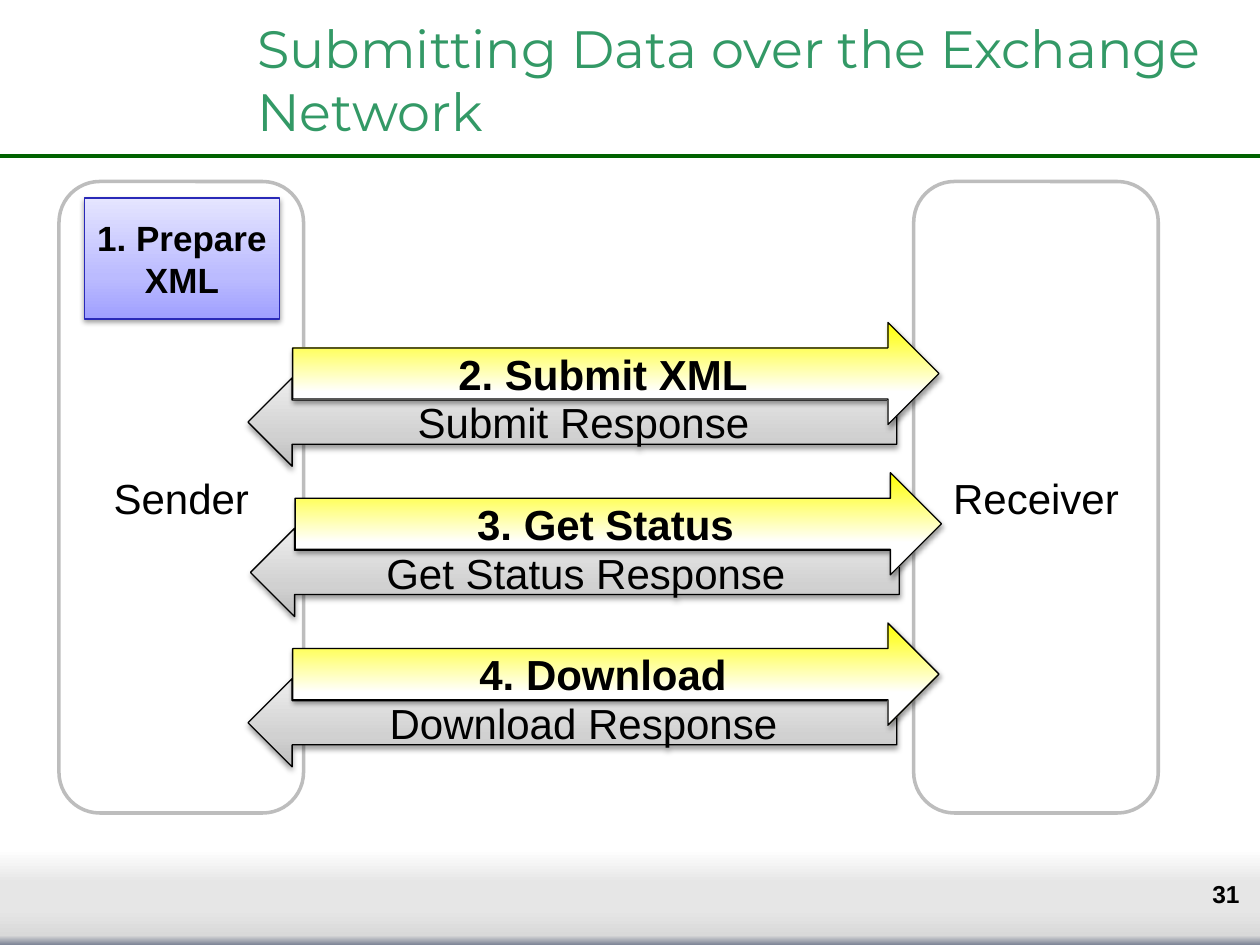
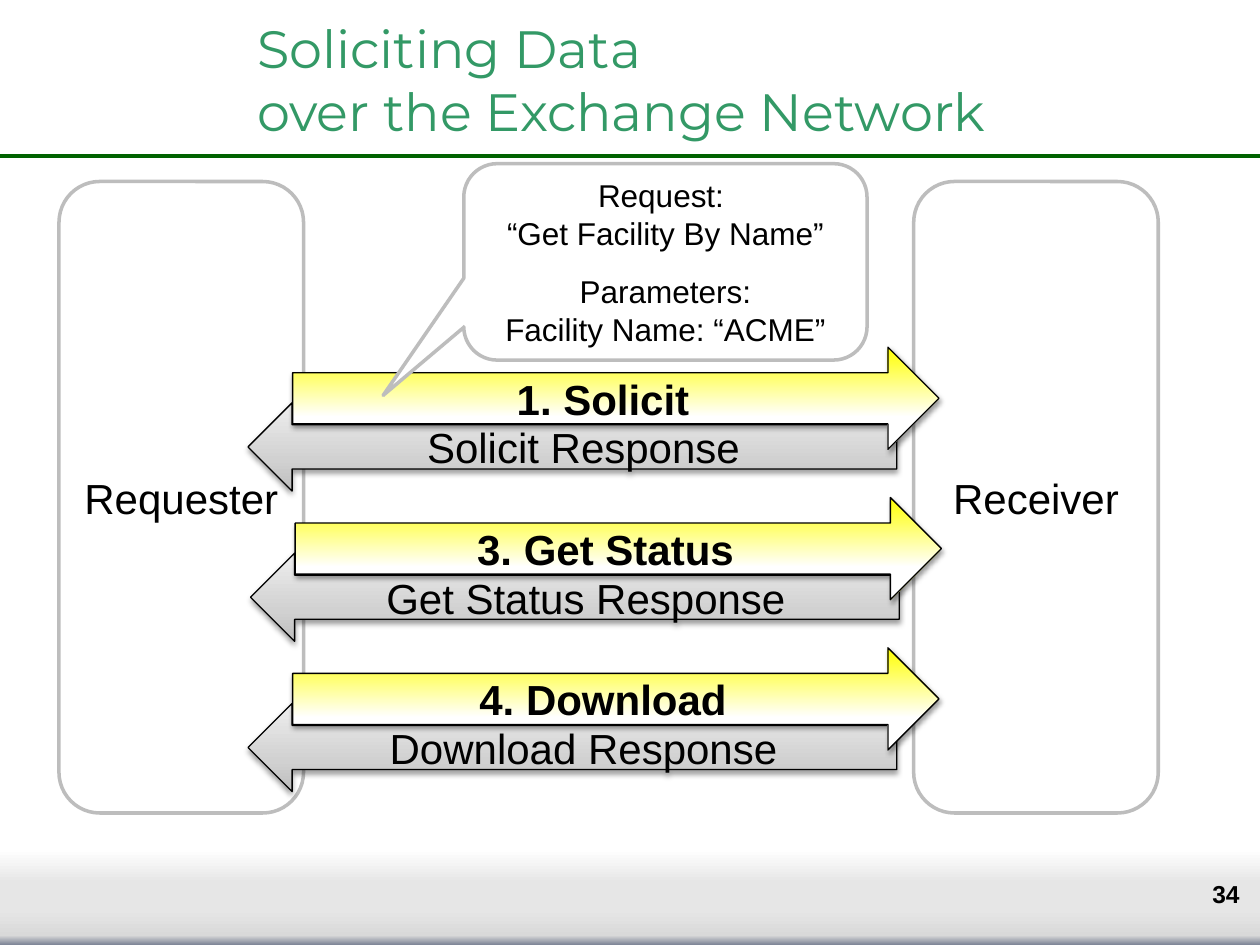
from lxml.etree import SubElement
from pptx import Presentation
from pptx.dml.color import RGBColor
from pptx.enum.shapes import MSO_CONNECTOR as Link, MSO_SHAPE as Kind
from pptx.enum.text import MSO_ANCHOR as Anchor, MSO_AUTO_SIZE as Fit, PP_ALIGN as Align
from pptx.oxml.ns import qn
from pptx.util import Cm, Pt

WIDTH, HEIGHT = 25.4, 19.05
BLACK = RGBColor(0x00, 0x00, 0x00)
WHITE = RGBColor(0xFF, 0xFF, 0xFF)
SILVER = RGBColor(0xBD, 0xBD, 0xBD)
GREEN = RGBColor(0x33, 0x99, 0x66)
FOREST = RGBColor(0x00, 0x63, 0x00)
NAVY = RGBColor(0x29, 0x29, 0xB8)
PALE = RGBColor(0xE6, 0xE6, 0xE6)
YELLOW = RGBColor(0xFF, 0xFF, 0x00)

# Each gradient is an angle and its (percent, colour) stops.
FOOTER = 90, [(0, WHITE), (35, PALE), (63, PALE), (90, RGBColor(0xD9, 0xD9, 0xD9)),
              (100, RGBColor(0x7D, 0x84, 0x96)), (100, PALE)]
SEND = 90, [(0, YELLOW), (68, WHITE), (100, WHITE), (100, PALE)]
REPLY = 270, [(0, SILVER), (35, RGBColor(0xD1, 0xD1, 0xD1)), (100, RGBColor(0xEE, 0xEE, 0xEE))]
TASK = 270, [(0, RGBColor(0x9F, 0x9F, 0xFF)), (35, RGBColor(0xBB, 0xBB, 0xFF)),
             (100, RGBColor(0xE5, 0xE5, 0xFF))]

STEP = 3.03
COLUMN_TOP, COLUMN_W, COLUMN_H = 3.66, 4.93, 12.73


def write(shape, *texts, size=24, bold=False, color=BLACK, font="Arial",
          align=Align.CENTER, anchor=Anchor.MIDDLE, gap=0):
    """Write one paragraph per text; gap is the space between them in points."""
    frame = shape.text_frame
    frame.word_wrap = True
    frame.auto_size = Fit.NONE
    frame.vertical_anchor = anchor
    for i, text in enumerate(texts):
        para = frame.add_paragraph() if i else frame.paragraphs[0]
        para.text = text
        para.alignment = align
        if i:
            para.space_before = Pt(gap)
        para.font.size, para.font.bold, para.font.name = Pt(size), bold, font
        para.font.color.rgb = color


def blend(shape, angle, stops):
    """Fill a shape with a linear gradient."""
    shape.fill.background()
    props = shape.element.spPr
    fill = props.makeelement(qn("a:gradFill"), {"rotWithShape": "1"})
    items = SubElement(fill, qn("a:gsLst"))
    for place, color in stops:
        stop = SubElement(items, qn("a:gs"), pos=str(place * 1000))
        SubElement(stop, qn("a:srgbClr"), val=str(color))
    SubElement(fill, qn("a:lin"), ang=str(angle * 60000), scaled="0")
    props.replace(props.find(qn("a:noFill")), fill)


def shade(shape):
    """Give a shape a soft shadow just below it."""
    effects = shape.element.spPr.find(qn("a:effectLst"))
    drop = SubElement(effects, qn("a:outerShdw"), blurRad=str(Pt(3.1)), dist=str(Pt(1.6)),
                      dir="5400000", rotWithShape="0")
    color = SubElement(drop, qn("a:srgbClr"), val=str(BLACK))
    SubElement(color, qn("a:alpha"), val="38000")


def draw(shapes, kind, box, fill=WHITE, line=SILVER, width=2):
    shape = shapes.add_shape(kind, *map(Cm, box))
    shape.shadow.inherit = False
    if isinstance(fill, RGBColor):
        shape.fill.solid()
        shape.fill.fore_color.rgb = fill
    else:
        blend(shape, *fill)
    if line is None:
        shape.line.fill.background()
    else:
        shape.line.color.rgb = line
        shape.line.width = Pt(width)
    return shape


def dress(layout, slide):
    """Give the layout its title box, footer band and rule."""
    title = layout.placeholders[0]
    title.left, title.top, title.width, title.height = map(Cm, (4.93, 0, 20.47, 3.18))
    band = draw(slide.shapes, Kind.RECTANGLE, (0, 17.12, WIDTH, 1.93), FOOTER, None)
    rule = slide.shapes.add_connector(Link.STRAIGHT, 0, Cm(3.15), Cm(WIDTH), Cm(3.15))
    rule.line.color.rgb = FOREST
    rule.line.width = Pt(2)
    SubElement(rule.element.spPr, qn("a:effectLst"))
    for part in (rule, band):
        layout.shapes.element.insert(2, part.element)


def head(slide, title, page):
    write(slide.shapes.title, title, size=30, color=GREEN, font="Montserrat", align=Align.LEFT)
    number = slide.shapes.add_textbox(*map(Cm, (19.96, 17.6, 5.28, 1.27)))
    write(number, page, size=14, bold=True, align=Align.RIGHT, anchor=Anchor.TOP)


def party(slide, left, name):
    box = left, COLUMN_TOP, COLUMN_W, COLUMN_H
    write(draw(slide.shapes, Kind.ROUNDED_RECTANGLE, box), name)


def swap(slide, left, top, call, answer):
    """Draw a call arrow over its answer arrow."""
    group = slide.shapes.add_group_shape()
    arrows = [(Kind.LEFT_ARROW, (left, top + 1.12, 13.08, 1.78), REPLY, answer, False),
              (Kind.RIGHT_ARROW, (left + 0.9, top, 13.03, 2.06), SEND, call, True)]
    for kind, box, fill, text, bold in arrows:
        arrow = draw(group.shapes, kind, box, fill, BLACK, 0.75)
        shade(arrow)
        write(arrow, text, bold=bold)


def flow(slide, sender, top, calls):
    """Draw both parties and the calls that pass between them."""
    party(slide, 1.19, sender)
    party(slide, 18.42, "Receiver")
    for i, (call, answer) in enumerate(calls):
        swap(slide, 5 + 0.05 * (i % 2), top + i * STEP, call, answer)


def task(slide, left, top):
    box = draw(slide.shapes, Kind.RECTANGLE, (left, top, 3.94, 2.44), TASK, NAVY, 0.75)
    shade(box)
    write(box, "1. Prepare XML", size=20, bold=True)


def note(slide, left, top):
    bubble = draw(slide.shapes, Kind.ROUNDED_RECTANGULAR_CALLOUT, (left, top, 8.13, 3.96))
    for i, value in enumerate((-0.7, 0.68, 0.17)):
        bubble.adjustments[i] = value
    write(bubble, "Request: \n“Get Facility By Name”",
          "Parameters:\nFacility Name: “ACME”", size=18, gap=12)


def main():
    deck = Presentation()
    deck.slide_width, deck.slide_height = Cm(WIDTH), Cm(HEIGHT)
    layout = deck.slide_layouts[5]
    shared = [("3. Get Status", "Get Status Response"), ("4. Download", "Download Response")]

    submit = deck.slides.add_slide(layout)
    dress(layout, submit)
    head(submit, "Submitting Data over the Exchange Network", "31")
    flow(submit, "Sender", 6.5, [("2. Submit XML", "Submit Response")] + shared)
    task(submit, 1.7, 3.99)

    solicit = deck.slides.add_slide(layout)
    head(solicit, "Soliciting Data\nover the Exchange Network", "34")
    flow(solicit, "Requester", 7, [("1. Solicit", "Solicit Response")] + shared)
    note(solicit, 9.35, 3.3)

    deck.save("out.pptx")


if __name__ == "__main__":
    main()
